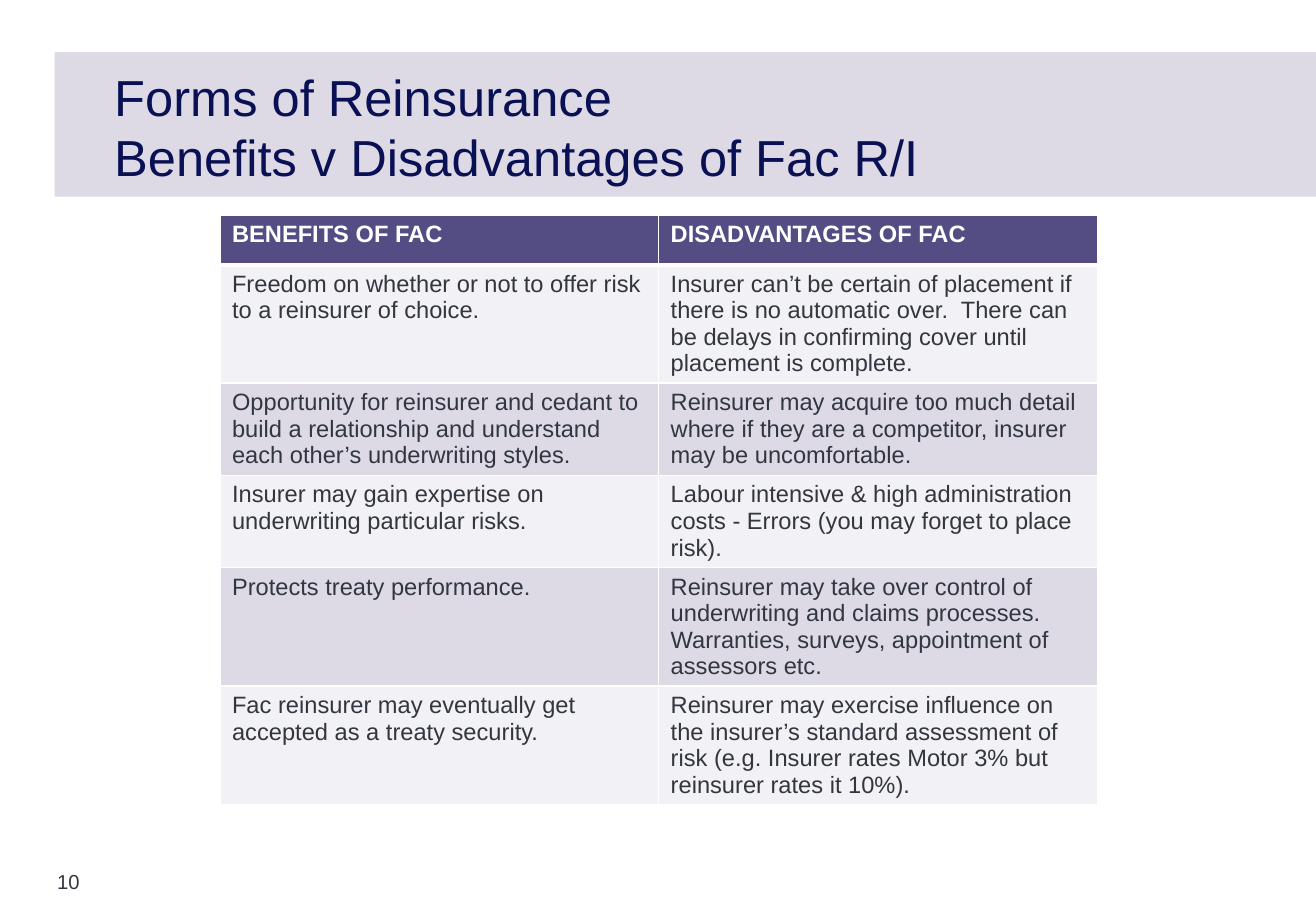
from pptx import Presentation
from pptx import util as u
from pptx.dml import color
from pptx.enum import shapes, text
from pptx.oxml import parse_xml
from pptx.oxml.ns import nsdecls

NAVY, SLATE, PURPLE = "0A1054", "32363F", "534D84"
LILAC, PALE, WHITE = "DDDAE6", "F2F1F5", "FFFFFF"

TITLE_LINES = ["Forms of Reinsurance", "Benefits v Disadvantages of Fac R/I"]
HEADINGS = ("BENEFITS OF FAC", "DISADVANTAGES OF FAC")
COMPARISON = [
    ("Freedom on whether or not to offer risk to a reinsurer of choice.",
     "Insurer can’t be certain of placement if there is no automatic over.  There can be delays "
     "in confirming cover until placement is complete."),
    ("Opportunity for reinsurer and cedant to build a relationship and understand each other’s "
     "underwriting styles.",
     "Reinsurer may acquire too much detail where if they are a competitor, insurer may be "
     "uncomfortable."),
    ("Insurer may gain expertise on underwriting particular risks.",
     "Labour intensive & high administration costs - Errors (you may forget to place risk)."),
    ("Protects treaty performance.",
     "Reinsurer may take over control of underwriting and claims processes.  Warranties, surveys, "
     "appointment of assessors etc."),
    ("Fac reinsurer may eventually get accepted as a treaty security.",
     "Reinsurer may exercise influence on the insurer’s standard assessment of risk (e.g. Insurer "
     "rates Motor 3% but reinsurer rates it 10%)."),
]
ROW_HEIGHTS = [0.41, 0.97, 0.76, 0.76, 0.97, 0.97]


def rgb(value):
    return color.RGBColor.from_string(value)


def add_run(paragraph, words, size, colour, bold=False):
    run = paragraph.add_run()
    run.text = words
    run.font.name = "Arial"
    run.font.size = u.Pt(size)
    run.font.bold = bold
    run.font.color.rgb = rgb(colour)


def clear_frame(frame, anchor):
    frame.margin_left = frame.margin_right = frame.margin_top = frame.margin_bottom = 0
    frame.auto_size = text.MSO_AUTO_SIZE.NONE
    frame.word_wrap = True
    frame.vertical_anchor = anchor


def add_heading(slide, left, top, width, height):
    band = slide.shapes.add_shape(shapes.MSO_SHAPE.RECTANGLE, u.Inches(left), u.Inches(top),
                                  u.Inches(width), u.Inches(height))
    band.shadow.inherit = False
    band.fill.solid()
    band.fill.fore_color.rgb = rgb(LILAC)
    band.line.fill.background()
    slide.shapes._spTree.insert(2, band._element)

    title = slide.shapes.title
    title.left, title.top = u.Inches(left + 0.49), u.Inches(top + 0.17)
    title.width, title.height = u.Inches(8.98), u.Inches(0.94)
    clear_frame(title.text_frame, text.MSO_ANCHOR.BOTTOM)
    paragraph = title.text_frame.paragraphs[0]
    paragraph.alignment = text.PP_ALIGN.LEFT
    for index, line in enumerate(TITLE_LINES):
        if index:
            paragraph.add_line_break()
        add_run(paragraph, line, 30, NAVY)


def set_borders(cell, bottom):
    properties = cell._tc.get_or_add_tcPr()
    for index, (side, points) in enumerate((("L", 1), ("R", 1), ("T", 1), ("B", bottom))):
        properties.insert(index, parse_xml(
            f'<a:ln{side} {nsdecls("a")} w="{u.Pt(points)}"><a:solidFill>'
            f'<a:srgbClr val="{WHITE}"/></a:solidFill></a:ln{side}>'))


def add_comparison(slide, left, top, width):
    rows = [HEADINGS] + COMPARISON
    table = slide.shapes.add_table(len(rows), 2, u.Inches(left), u.Inches(top), u.Inches(width),
                                   u.Inches(sum(ROW_HEIGHTS))).table
    for column in table.columns:
        column.width = u.Inches(width / 2)
    for index, row in enumerate(rows):
        table.rows[index].height = u.Inches(ROW_HEIGHTS[index])
        header = index == 0
        fill = PURPLE if header else (PALE if index % 2 else LILAC)
        for cell, words in zip(table.rows[index].cells, row):
            cell.fill.solid()
            cell.fill.fore_color.rgb = rgb(fill)
            set_borders(cell, 3 if header or index == 0 else 1)
            add_run(cell.text_frame.paragraphs[0], words, 14, WHITE if header else SLATE, header)
    for cell in table.rows[1].cells:
        cell._tc.tcPr.find("{*}lnT").set("w", str(u.Pt(3)))


def add_page_number(slide, left, top, width, height):
    box = slide.shapes.add_textbox(u.Inches(left), u.Inches(top), u.Inches(width), u.Inches(height))
    clear_frame(box.text_frame, text.MSO_ANCHOR.TOP)
    add_run(box.text_frame.paragraphs[0], "10", 12, SLATE)


def main():
    presentation = Presentation()
    presentation.slide_width, presentation.slide_height = u.Inches(10.83), u.Inches(7.5)
    slide = presentation.slides.add_slide(presentation.slide_layouts[5])
    add_heading(slide, 0.45, 0.43, 10.38, 1.19)
    add_page_number(slide, 0.47, 7.16, 0.39, 0.26)
    add_comparison(slide, 1.81, 1.77, 7.22)
    presentation.save("out.pptx")


if __name__ == "__main__":
    main()
